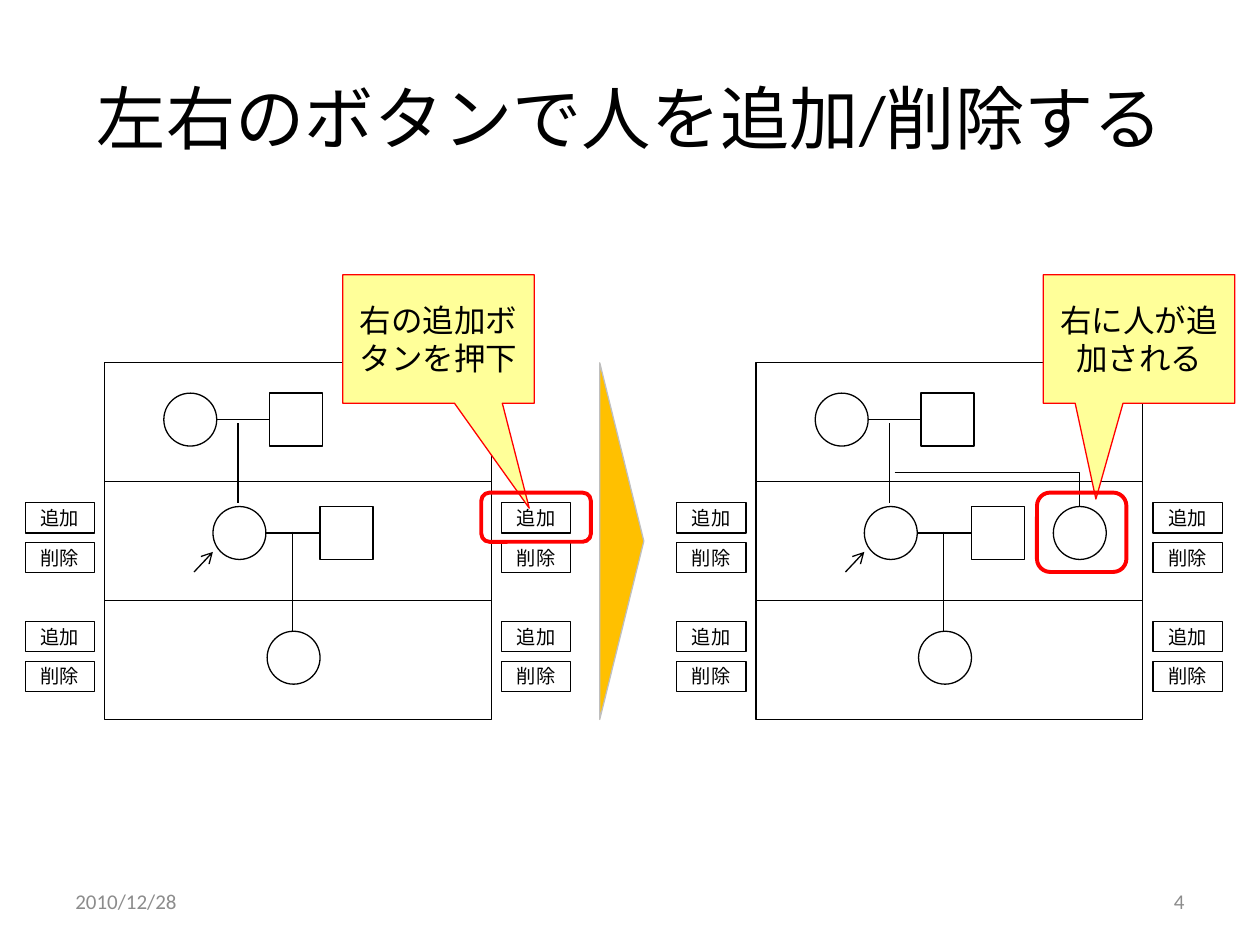
"""Build the slide that shows how side buttons add or delete a person."""
from lxml import etree
from pptx import Presentation, util as u
from pptx.dml.color import RGBColor
from pptx.enum import lang, shapes, text
from pptx.oxml.ns import qn

KIND = shapes.MSO_SHAPE
LINK = shapes.MSO_CONNECTOR
ALIGN = text.PP_ALIGN
HUE = {"ink": "000000", "red": "FF0000", "note": "FFFF99",
       "gold": "FFC000", "edge": "BFBFBF", "gray": "8C8C8C"}

TEXTS = [
    ("左右のボタンで人を追加/削除する", (0.5, 0.3, 9, 1.25), 39.6, "ink", ALIGN.CENTER),
    ("2010/12/28", (0.5, 6.95, 2.33, 0.4), 12, "gray", ALIGN.LEFT),
    ("4", (7.17, 6.95, 2.33, 0.4), 12, "gray", ALIGN.RIGHT),
]
NOTES = [
    ("右の追加ボタンを押下", 2.72, (0.474, 1.317)),
    ("右に人が追加される", 8.28, (-0.225, 1.246)),
]
MARKS = [(3.82, 3.91, 0.87, 0.39), (8.23, 3.91, 0.71, 0.63)]
LABELS = ["追加", "削除"]
PAIRS = [(1.3, 2.14, 3.12), (1.69, 2.54, 4.02)]
CHILD = (2.12, 5.01)
DROPS = [(1.89, 3.36, 3.99), (2.32, 4.22, 5.01)]
ADDED = (8.36, 4.02)
SIDES = [3.98, 0.2]
SIZE, TOP, TALL, WIDE, LEFT = 0.42, 2.88, 2.83, 3.07, 0.83
BAND = TALL / 3
SHIFT = 5.17

deck = Presentation()
deck.slide_width, deck.slide_height = u.Inches(10), u.Inches(7.5)
slide = deck.slides.add_slide(deck.slide_layouts[6])


def tint(name):
    return RGBColor.from_string(HUE[name])


def write(shape, words, size=11, hue="ink", align=ALIGN.CENTER, inset=None):
    frame = shape.text_frame
    frame.word_wrap = True
    frame.vertical_anchor = text.MSO_ANCHOR.MIDDLE
    if inset is not None:
        frame.margin_left = frame.margin_right = u.Inches(inset)
        frame.margin_top = frame.margin_bottom = u.Inches(inset)
    para = frame.paragraphs[0]
    para.alignment = align
    run = para.add_run()
    run.text = words
    font = run.font
    font.name, font.size, font.color.rgb = "Calibri", u.Pt(size), tint(hue)
    font.language_id = lang.MSO_LANGUAGE_ID.JAPANESE


def draw(kind, x, y, w, h, fill=None, line="ink", width=0.75):
    shape = slide.shapes.add_shape(kind, *map(u.Inches, (x, y, w, h)))
    shape.shadow.inherit = False
    if fill:
        shape.fill.solid()
        shape.fill.fore_color.rgb = tint(fill)
    else:
        shape.fill.background()
    shape.line.color.rgb, shape.line.width = tint(line), u.Pt(width)
    return shape


def join(x1, y1, x2, y2, kind=LINK.STRAIGHT):
    link = slide.shapes.add_connector(kind, *map(u.Inches, (x1, y1, x2, y2)))
    link.line.color.rgb, link.line.width = tint("ink"), u.Pt(0.75)
    etree.SubElement(link._element.spPr, qn("a:effectLst"))
    return link


def circle(x, y):
    return draw(KIND.OVAL, x, y, SIZE, SIZE)


def family(dx):
    for x1, x2, y in PAIRS:
        circle(x1 + dx, y)
        square = draw(KIND.RECTANGLE, x2 + dx, y, SIZE, SIZE)
        mid = y + SIZE / 2
        join(x1 + dx + SIZE, mid, x2 + dx, mid).end_connect(square, 1)
    circle(CHILD[0] + dx, CHILD[1])
    for x, y1, y2 in DROPS:
        join(x + dx, y1, x + dx, y2)
    for row in range(3):
        draw(KIND.RECTANGLE, LEFT + dx, TOP + row * BAND, WIDE, BAND)
    for row in range(2):
        for x in SIDES:
            for i, label in enumerate(LABELS):
                y = 3.99 + row * BAND + i * BAND / 3
                write(draw(KIND.RECTANGLE, x + dx, y, 0.55, 0.24), label, inset=0)
    arrow = join(1.54 + dx, 4.54, 1.69 + dx, 4.38)
    etree.SubElement(arrow.line._get_or_add_ln(), qn("a:tailEnd"), type="arrow")


def main():
    for words, box, size, hue, align in TEXTS:
        area = slide.shapes.add_textbox(*map(u.Inches, box))
        write(area, words, size=size, hue=hue, align=align)
    for dx in (0, SHIFT):
        family(dx)
    x, y = ADDED
    circle(x, y)
    bend = join(7.1, 3.75, x + SIZE / 2, y, LINK.ELBOW)
    bend._element.spPr.find(qn("a:prstGeom")).set("prst", "bentConnector2")
    for words, left, tip in NOTES:
        note = draw(KIND.RECTANGULAR_CALLOUT, left, 2.18, 1.52, 1.02, "note", "red")
        note.adjustments[0], note.adjustments[1] = tip
        write(note, words, size=18)
    wedge = draw(KIND.ISOSCELES_TRIANGLE, 3.52, 4.12, TALL, 0.35, "gold", "edge")
    wedge.rotation = 90
    for box in MARKS:
        draw(KIND.ROUNDED_RECTANGLE, *box, line="red", width=2.25)
    deck.save("out.pptx")


if __name__ == "__main__":
    main()
